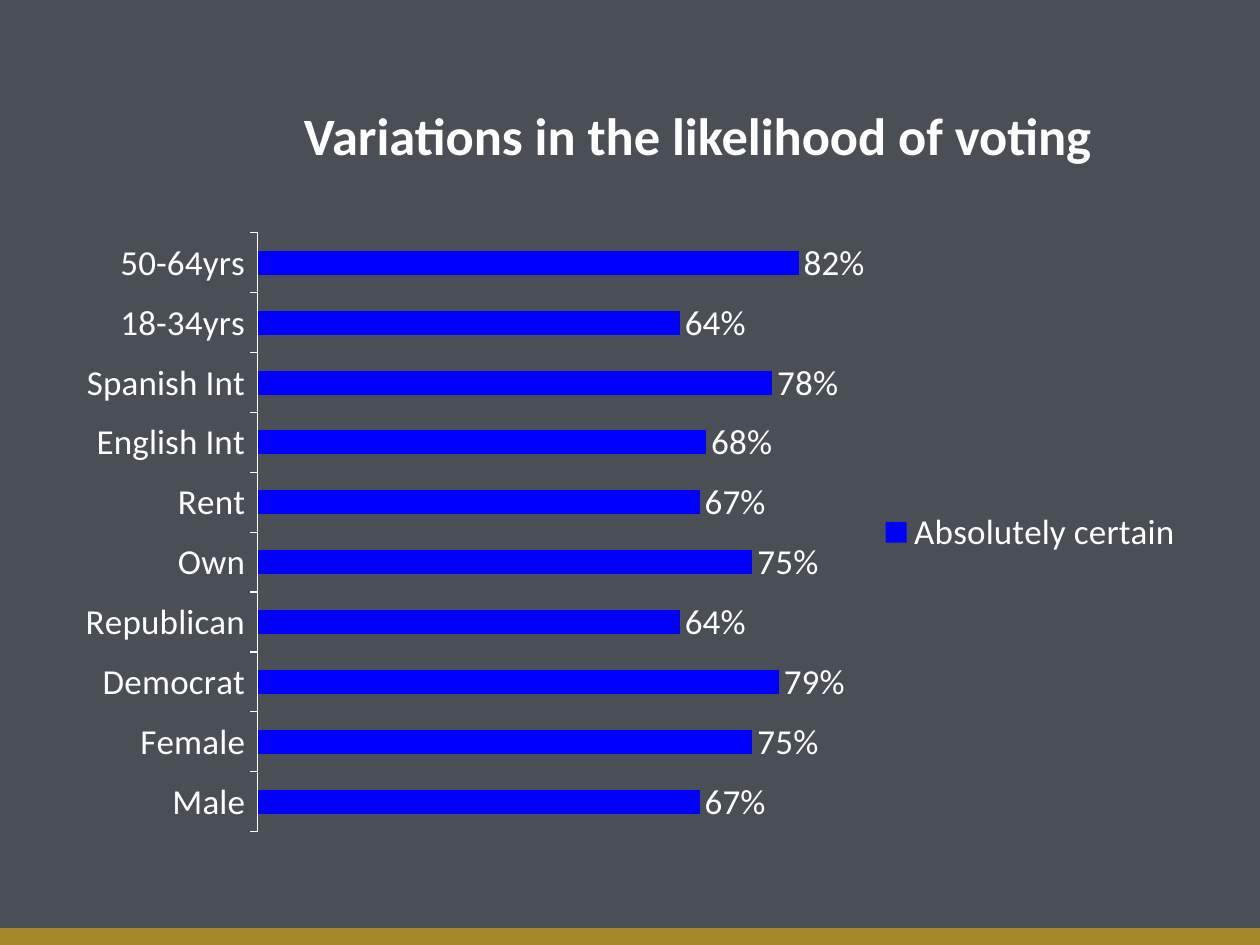
from pptx import Presentation
from pptx.chart import data
from pptx.dml.color import RGBColor
from pptx.enum import chart as kinds, shapes, text
from pptx.util import Inches, Pt

SLATE = RGBColor(0x4A, 0x4F, 0x55)
GOLD = RGBColor(0xA5, 0x86, 0x29)
WHITE = RGBColor(0xFF, 0xFF, 0xFF)
BLUE = RGBColor(0x00, 0x00, 0xFF)

LIKELIHOOD = {
    "Male": 0.67, "Female": 0.75, "Democrat": 0.79, "Republican": 0.64,
    "Own": 0.75, "Rent": 0.67, "English Int": 0.68, "Spanish Int": 0.78,
    "18-34yrs": 0.64, "50-64yrs": 0.82,
}


def apply(target, values):
    """Set each named attribute of the target."""
    for name, value in values.items():
        setattr(target, name, value)


def style_font(font, size, bold=False):
    """Give a font the slide's typeface and white colour."""
    apply(font, {"name": "Calibri", "size": Pt(size), "bold": bold})
    font.color.rgb = WHITE


def place_footer_bar(page, left, top, width, height):
    """Draw the gold bar along the bottom edge."""
    bar = page.shapes.add_shape(shapes.MSO_SHAPE.RECTANGLE, left, top, width, height)
    bar.shadow.inherit = False
    bar.fill.solid()
    bar.fill.fore_color.rgb = GOLD
    bar.line.color.rgb = GOLD
    bar.line.width = Pt(0.75)


def place_title(page, left, top, width, height):
    """Move and format the title placeholder."""
    title = page.shapes.title
    apply(title, {"left": left, "top": top, "width": width, "height": height})
    frame = title.text_frame
    apply(frame, {"text": "Variations in the likelihood of voting", "word_wrap": True,
                  "vertical_anchor": text.MSO_ANCHOR.MIDDLE})
    para = frame.paragraphs[0]
    para.alignment = text.PP_ALIGN.CENTER
    style_font(para.runs[0].font, 30, bold=True)


def place_chart(page, left, top, width, height):
    """Add the bar chart of likelihood by group."""
    figures = data.CategoryChartData(number_format="0%")
    figures.categories = list(LIKELIHOOD)
    figures.add_series("Absolutely certain", list(LIKELIHOOD.values()))
    chart = page.shapes.add_chart(
        kinds.XL_CHART_TYPE.BAR_CLUSTERED, left, top, width, height, figures).chart
    apply(chart, {"has_title": False, "has_legend": True})
    style_font(chart.font, 10)

    apply(chart.legend, {"position": kinds.XL_LEGEND_POSITION.RIGHT,
                         "include_in_layout": False})
    style_font(chart.legend.font, 20)

    groups = chart.category_axis
    apply(groups, {"has_major_gridlines": False,
                   "major_tick_mark": kinds.XL_TICK_MARK.OUTSIDE})
    groups.format.line.color.rgb = WHITE
    style_font(groups.tick_labels.font, 20)
    apply(chart.value_axis, {"visible": False, "has_major_gridlines": False,
                             "minimum_scale": 0, "maximum_scale": 0.9})

    plot = chart.plots[0]
    apply(plot, {"gap_width": 150, "vary_by_categories": False, "has_data_labels": True})
    apply(plot.data_labels, {"show_value": True, "number_format": "0%",
                             "number_format_is_linked": False,
                             "position": kinds.XL_LABEL_POSITION.OUTSIDE_END})
    style_font(plot.data_labels.font, 20)
    bars = plot.series[0].format.fill
    bars.solid()
    bars.fore_color.rgb = BLUE


def main():
    """Build and save the deck."""
    deck = Presentation()
    apply(deck, {"slide_width": Inches(10), "slide_height": Inches(7.5)})
    page = deck.slides.add_slide(deck.slide_layouts[5])
    page.background.fill.solid()
    page.background.fill.fore_color.rgb = SLATE
    place_footer_bar(page, Inches(0), Inches(7.37), Inches(10), Inches(0.13))
    place_title(page, Inches(1.21), Inches(0.53), Inches(8.66), Inches(1.08))
    place_chart(page, Inches(0.5), Inches(1.75), Inches(9), Inches(4.95))
    deck.save("out.pptx")


if __name__ == "__main__":
    main()
